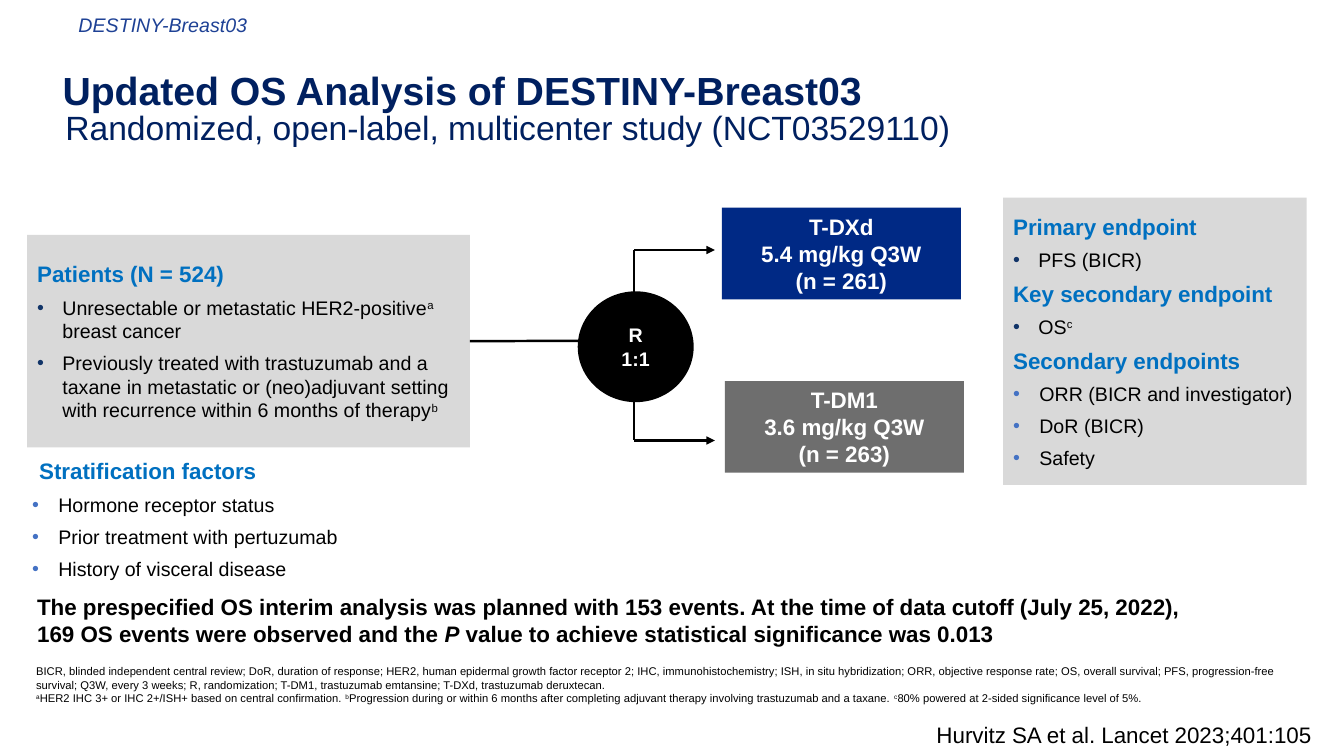
from dataclasses import dataclass

from lxml.etree import SubElement
from pptx import Presentation
from pptx.dml.color import RGBColor
from pptx.enum.shapes import MSO_CONNECTOR, MSO_SHAPE
from pptx.enum.text import MSO_ANCHOR, PP_ALIGN
from pptx.oxml.ns import qn
from pptx.util import Inches, Pt


@dataclass(frozen=True)
class Theme:
    font: str = "Arial"
    label: str = "1E4195"
    title: str = "002060"
    head: str = "0070C0"
    ink: str = "000000"
    white: str = "FFFFFF"
    panel: str = "D9D9D9"
    test: str = "002985"
    control: str = "6E6E6E"
    dark_dot: str = "113468"
    light_dot: str = "4472C4"
    title_size: int = 28
    sub_size: int = 24
    head_size: int = 16
    body_size: int = 14
    note_size: int = 8
    line: float = 1.75


T = Theme()


def style(size, color, gap=0, dot=None, left=0, first=0, **font):
    """Describe a paragraph: type, space before, bullet colour and indents."""
    return {"size": size, "color": color, "gap": gap, "dot": dot,
            "left": left, "first": first, "font": font}


HEAD = style(T.head_size, T.head, gap=6, bold=True)
DARK = style(T.body_size, T.ink, 6, T.dark_dot, 0.25, -0.25)
LIGHT = style(T.body_size, T.ink, 6, T.light_dot, 0.26, -0.26)
HANG = {**HEAD, "left": 0.26, "first": -0.19}
ARM = style(T.head_size, T.white, bold=True)
NODE = style(T.body_size, T.white, bold=True)
CLAIM = style(T.head_size, T.ink, bold=True)
NOTE = style(T.note_size, T.ink)


def add_runs(para, text, look):
    """Split text at | ; a part led by ^ is superscript, by * italic."""
    for part in text.split("|"):
        run = para.add_run()
        run.text = part.lstrip("^*")
        values = {"name": T.font, "size": Pt(look["size"]), **look["font"]}
        if part.startswith("*"):
            values["italic"] = True
        for key, value in values.items():
            setattr(run.font, key, value)
        run.font.color.rgb = RGBColor.from_string(look["color"])
        if part.startswith("^"):
            run._r.get_or_add_rPr().set("baseline", "30000")


def indent(para, look):
    props = para._p.get_or_add_pPr()
    props.set("marL", str(Inches(look["left"])))
    props.set("indent", str(Inches(look["first"])))
    if look["dot"]:
        color = SubElement(props, qn("a:buClr"))
        SubElement(color, qn("a:srgbClr"), val=look["dot"])
        SubElement(props, qn("a:buFont"), typeface=T.font)
        SubElement(props, qn("a:buChar"), char="•")


def fill_text(shape, lines, align=PP_ALIGN.LEFT, anchor=MSO_ANCHOR.TOP):
    """Write (style, text) pairs, one paragraph each."""
    frame = shape.text_frame
    frame.word_wrap = True
    frame.vertical_anchor = anchor
    for i, (look, text) in enumerate(lines):
        para = frame.add_paragraph() if i else frame.paragraphs[0]
        indent(para, look)
        para.alignment = align
        para.space_before = Pt(look["gap"] if i else 0)
        add_runs(para, text, look)


def add_text(slide, at, lines, **place):
    box = slide.shapes.add_textbox(*map(Inches, at))
    fill_text(box, lines, **place)


def add_block(slide, at, fill, lines, align=PP_ALIGN.LEFT, kind=MSO_SHAPE.RECTANGLE):
    block = slide.shapes.add_shape(kind, *map(Inches, at))
    block.shadow.inherit = False
    block.fill.solid()
    block.fill.fore_color.rgb = RGBColor.from_string(fill)
    block.line.fill.background()
    fill_text(block, lines, align, MSO_ANCHOR.MIDDLE)
    return block


def add_line(slide, start, end, arrow=True):
    line = slide.shapes.add_connector(MSO_CONNECTOR.STRAIGHT, *map(Inches, start + end))
    line.line.width = Pt(T.line)
    line.line.color.rgb = RGBColor.from_string(T.ink)
    if arrow:
        SubElement(line.line._get_or_add_ln(), qn("a:tailEnd"), type="triangle")
    SubElement(line._element.spPr, qn("a:effectLst"))
    return line


def add_title(slide, text):
    title = slide.shapes.title
    spot = {"left": 0.52, "top": 0.68, "width": 12.56, "height": 0.49}
    for key, value in spot.items():
        setattr(title, key, Inches(value))
    look = style(T.title_size, T.title, bold=True)
    fill_text(title, [(look, text)], anchor=MSO_ANCHOR.BOTTOM)
    title.text_frame.paragraphs[0].line_spacing = 0.8


def add_design(slide):
    """Draw patients, randomization, both arms and the endpoints."""
    group = add_block(slide, (0.27, 2.33, 4.39, 2.11), T.panel, [
        (HEAD, "Patients (N = 524)"),
        (DARK, "Unresectable or metastatic HER2-positive|^a| breast cancer"),
        (DARK, "Previously treated with trastuzumab and a taxane in metastatic or "
               "(neo)adjuvant setting with recurrence within 6 months of therapy|^b"),
    ])
    entry = add_line(slide, (4.66, 3.38), (6.02, 3.38))
    entry.begin_connect(group, 3)

    stem, tip, high, low = 6.29, 7.09, 2.48, 4.37
    add_line(slide, (stem, high), (stem, low), arrow=False)
    for row in (high, low):
        add_line(slide, (stem, row), (tip, row))
    node = add_block(slide, (5.73, 2.89, 1.15, 1.1), T.ink,
                     [(NODE, "R"), (NODE, "1:1")], PP_ALIGN.CENTER, MSO_SHAPE.OVAL)
    node.text_frame.margin_left = node.text_frame.margin_right = Inches(0.05)

    arms = [
        (7.16, 2.06, T.test, ("T-DXd", "5.4 mg/kg Q3W", "(n = 261)")),
        (7.19, 3.78, T.control, ("T-DM1", "3.6 mg/kg Q3W", "(n = 263)")),
    ]
    for left, top, fill, lines in arms:
        add_block(slide, (left, top, 2.37, 0.91), fill,
                  [(ARM, line) for line in lines], PP_ALIGN.CENTER)

    add_block(slide, (9.95, 1.96, 3.01, 2.85), T.panel, [
        (HEAD, "Primary endpoint"),
        (DARK, "PFS (BICR)"),
        (HEAD, "Key secondary endpoint"),
        (DARK, "OS|^c"),
        (HEAD, "Secondary endpoints"),
        (LIGHT, "ORR (BICR and investigator)"),
        (LIGHT, "DoR (BICR)"),
        (LIGHT, "Safety"),
    ])


def add_notes(slide):
    """Write the texts below the study design."""
    add_text(slide, (0.26, 6.54, 12.92, 0.5), [
        (NOTE, "BICR, blinded independent central review; DoR, duration of response; "
               "HER2, human epidermal growth factor receptor 2; IHC, immunohistochemistry; "
               "ISH, in situ hybridization; ORR, objective response rate; OS, overall "
               "survival; PFS, progression-free survival; Q3W, every 3 weeks; R, "
               "randomization; T-DM1, trastuzumab emtansine; T-DXd, trastuzumab deruxtecan."),
        (NOTE, "^a|HER2 IHC 3+ or IHC 2+/ISH+ based on central confirmation. |^b|Progression "
               "during or within 6 months after completing adjuvant therapy involving "
               "trastuzumab and a taxane. |^c|80% powered at 2-sided significance level of 5%."),
    ], anchor=MSO_ANCHOR.BOTTOM)
    add_text(slide, (0.27, 5.84, 12.8, 0.64), [
        (CLAIM, "The prespecified OS interim analysis was planned with 153 events. "
                "At the time of data cutoff (July 25, 2022),"),
        (CLAIM, "169 OS events were observed and the |*P| value to achieve "
                "statistical significance was 0.013"),
    ])
    add_text(slide, (0.22, 4.49, 5.78, 1.57), [
        (HANG, "Stratification factors"),
        (LIGHT, "Hormone receptor status"),
        (LIGHT, "Prior treatment with pertuzumab"),
        (LIGHT, "History of visceral disease"),
    ])
    add_text(slide, (9.19, 7.11, 4.14, 0.37),
             [(style(T.head_size, T.ink), "Hurvitz SA et al. Lancet 2023;401:105")])


def main():
    deck = Presentation()
    deck.slide_width, deck.slide_height = Inches(13.33), Inches(7.5)
    slide = deck.slides.add_slide(deck.slide_layouts[5])
    add_text(slide, (0.68, 0.08, 2.2, 0.34),
             [(style(T.body_size, T.label, italic=True), "DESTINY-Breast03")])
    add_title(slide, "Updated OS Analysis of DESTINY-Breast03")
    add_text(slide, (0.55, 1.01, 12.26, 0.49),
             [(style(T.sub_size, T.title),
               "Randomized, open-label, multicenter study (NCT03529110)")])
    add_design(slide)
    add_notes(slide)
    deck.save("out.pptx")


if __name__ == "__main__":
    main()
